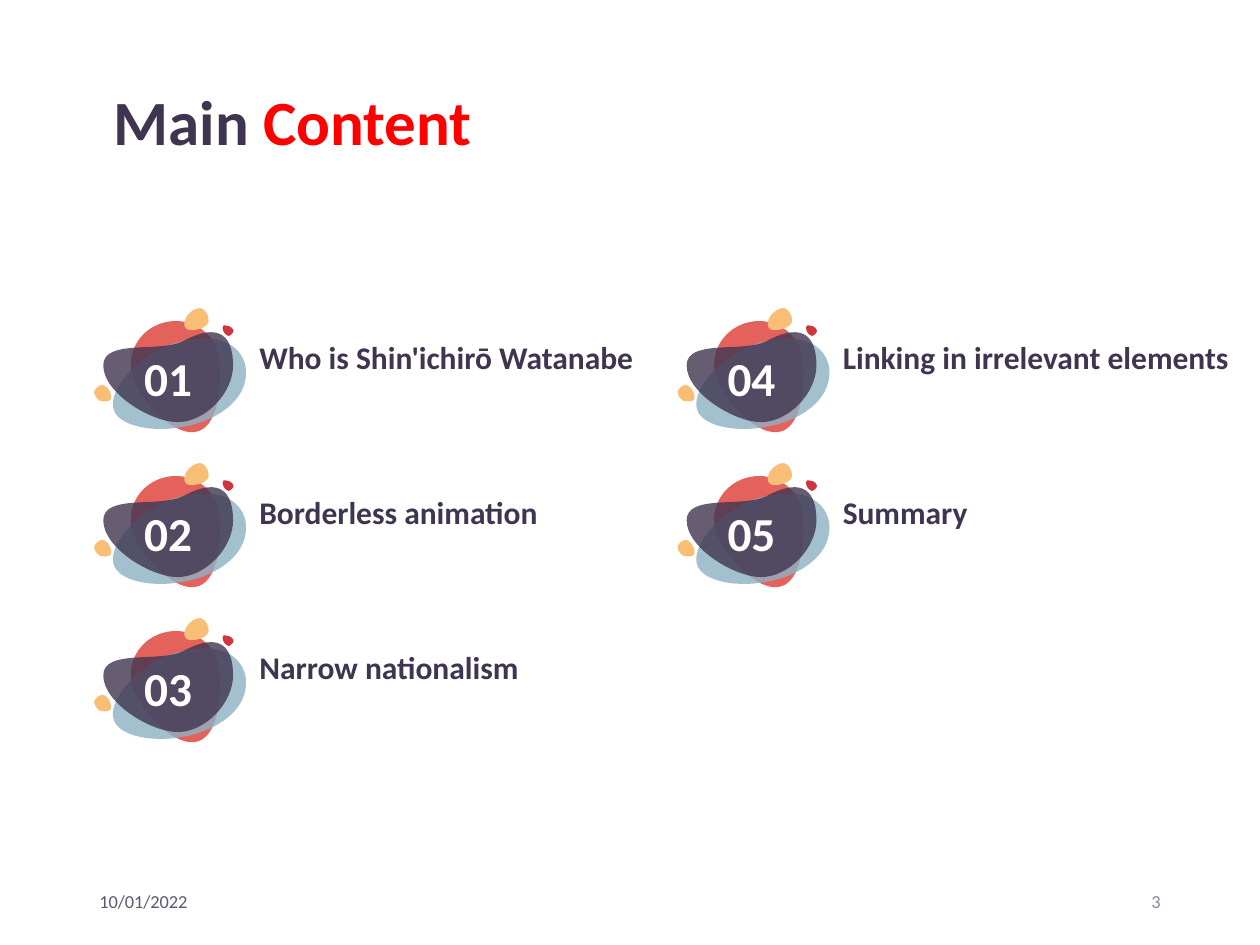
"""Build a contents slide with five numbered badges."""
from dataclasses import dataclass

from lxml import etree
from pptx import Presentation
from pptx.dml.color import RGBColor
from pptx.enum.text import MSO_ANCHOR, MSO_AUTO_SIZE, PP_ALIGN
from pptx.oxml.ns import qn
from pptx.util import Inches, Pt

LEFT, CENTER, RIGHT = PP_ALIGN.LEFT, PP_ALIGN.CENTER, PP_ALIGN.RIGHT
MIDDLE, BOTTOM = MSO_ANCHOR.MIDDLE, MSO_ANCHOR.BOTTOM
GROW = MSO_AUTO_SIZE.SHAPE_TO_FIT_TEXT


@dataclass(frozen=True)
class Theme:
    """Colours, font and type sizes of the slide."""
    font: str = "Calibri"
    dark: str = "403551"
    accent: str = "FF0000"
    coral: str = "E4625C"
    blue: str = "8DB1C4"
    amber: str = "F9BE75"
    red: str = "D0343C"
    white: str = "FFFFFF"
    date: str = "615474"
    page: str = "848B98"
    title: float = 36
    number: float = 27
    label: float = 18
    footer: float = 10.5


THEME = Theme()
CORAL = [(.29, .48), (.31, .67), (.6, 1), (.79, .98), (.99, .96), (1.01, .59), (.99, .41),
         (.98, .22), (.8, .08), (.61, .1), (.41, .12), (.27, .29), (.29, .48)]
BLUE = [(.16, .82), (.22, .94), (.48, .98), (.69, .94), (.91, .91), (1.24, .75), (1.2, .46),
        (1.18, .35), (1.06, .15), (.62, .28), (.37, .36), (.08, .65), (.16, .82)]
DARK = [(.07, .45), (.07, .67), (.45, .9), (.66, .9), (.88, .9), (1.1, .67), (1.1, .45),
        (1.1, .24), (1.01, .09), (.7, .26), (.51, .35), (.07, .24), (.07, .45)]
TOP = [(.73, .16), (.75, .18), (.85, .17), (.89, .13), (.93, .09), (.89, .03), (.87, .01),
       (.84, -.02), (.79, 0), (.75, .04), (.71, .08), (.7, .14), (.73, .16)]
SIDE = [(.13, .72), (.14, .69), (.12, .63), (.08, .61), (.05, .59), (.01, .63), (0, .65),
        (-.01, .67), (.01, .71), (.04, .73), (.08, .74), (.11, .74), (.13, .72)]
DOT = [(1.02, .14), (1.01, .16), (1.03, .2), (1.05, .21), (1.07, .23), (1.09, .2), (1.1, .19),
       (1.11, .18), (1.1, .15), (1.07, .14), (1.05, .13), (1.02, .13), (1.02, .14)]
BLOBS = [(CORAL, THEME.coral, 100), (BLUE, THEME.blue, 80), (DARK, THEME.dark, 80),
         (TOP, THEME.amber, 100), (SIDE, THEME.amber, 100), (DOT, THEME.red, 100)]
TOPICS = [("Who is Shin'ichirō Watanabe", 3.37), ("Borderless animation", 3.23),
          ("Narrow nationalism", 3.05), ("Linking in irrelevant elements", 3.61),
          ("Summary", 2.45)]
ROWS = 3


def style(run, size, color, bold=False):
    """Set the font of one run."""
    font = run.font
    font.name, font.size, font.bold = THEME.font, Pt(size), bold
    font.color.rgb = RGBColor.from_string(color)


def write(shape, text, size, color, bold=False, align=LEFT, anchor=MIDDLE):
    """Fill a shape with one styled line and return its frame."""
    frame = shape.text_frame
    frame.text = text
    frame.vertical_anchor = anchor
    line = frame.paragraphs[0]
    line.alignment = align
    style(line.runs[0], size, color, bold)
    return frame


def bend(shape):
    """Turn each three straight segments into one cubic curve."""
    lines = list(shape._element.iter(qn("a:lnTo")))
    for i in range(0, len(lines), 3):
        curve = etree.Element(qn("a:cubicBezTo"))
        lines[i].addprevious(curve)
        for line in lines[i:i + 3]:
            curve.append(line[0])
            line.getparent().remove(line)


def draw_blob(group, x, y, points, color, alpha):
    """Draw one closed curved outline from the badge corner."""
    spots = [(Inches(x + dx), Inches(y + dy)) for dx, dy in points]
    pen = group.shapes.build_freeform(*spots[0])
    pen.add_line_segments(spots[1:], close=True)
    blob = pen.convert_to_shape()
    bend(blob)
    blob.shadow.inherit = False
    blob.line.fill.background()
    blob.fill.solid()
    blob.fill.fore_color.rgb = RGBColor.from_string(color)
    if alpha < 100:
        tint = next(blob._element.spPr.iter(qn("a:srgbClr")))
        etree.SubElement(tint, qn("a:alpha")).set("val", str(alpha * 1000))
    return blob


def add_badge(slide, x, y, number):
    """Draw the blob group with its number."""
    group = slide.shapes.add_group_shape()
    for points, color, alpha in BLOBS:
        blob = draw_blob(group, x, y, points, color, alpha)
        if points is DARK:
            frame = write(blob, number, THEME.number, THEME.white, True, CENTER)
            frame.margin_left = frame.margin_right = frame.margin_bottom = Inches(.03)
            frame.margin_top = Inches(.13)


def add_topic(slide, x, y, number, text, width):
    """Place a badge and the topic beside it."""
    add_badge(slide, x, y, number)
    box = slide.shapes.add_textbox(Inches(x + 1.21), Inches(y + .08), Inches(width), Inches(.45))
    frame = write(box, text, THEME.label, THEME.dark, True, anchor=BOTTOM)
    frame.word_wrap = False
    frame.auto_size = GROW
    frame.margin_top, frame.margin_bottom = Inches(.15), 0


def add_topics(slide, x, y, across, down):
    """Lay the topics out column by column."""
    for i, (text, width) in enumerate(TOPICS):
        col, row = divmod(i, ROWS)
        add_topic(slide, x + col * across, y + row * down, f"{i + 1:02}", text, width)


def add_title(slide, x, y, width, height):
    """Place the two-colour title."""
    box = slide.shapes.add_textbox(Inches(x), Inches(y), Inches(width), Inches(height))
    frame = write(box, " Main ", THEME.title, THEME.dark, True)
    frame.word_wrap = True
    line = frame.paragraphs[0]
    line.line_spacing = .9
    run = line.add_run()
    run.text = "Content"
    style(run, THEME.title, THEME.accent, True)


def add_footer(slide, x, y, width, height):
    """Place the date at the left and the page at the right."""
    part = 2.25
    for left, text, color, align in ((x, "10/01/2022", THEME.date, LEFT),
                                     (x + width - part, "3", THEME.page, RIGHT)):
        box = slide.shapes.add_textbox(Inches(left), Inches(y), Inches(part), Inches(height))
        write(box, text, THEME.footer, color, align=align).word_wrap = True


def main():
    """Build and save the slide."""
    deck = Presentation()
    deck.slide_width, deck.slide_height = Inches(10), Inches(7.5)
    slide = deck.slides.add_slide(deck.slide_layouts[6])
    add_title(slide, .69, .37, 8.62, 1.24)
    add_topics(slide, .75, 2.45, 4.63, 1.23)
    add_footer(slide, .69, 6.95, 8.62, .4)
    deck.save("out.pptx")


if __name__ == "__main__":
    main()
